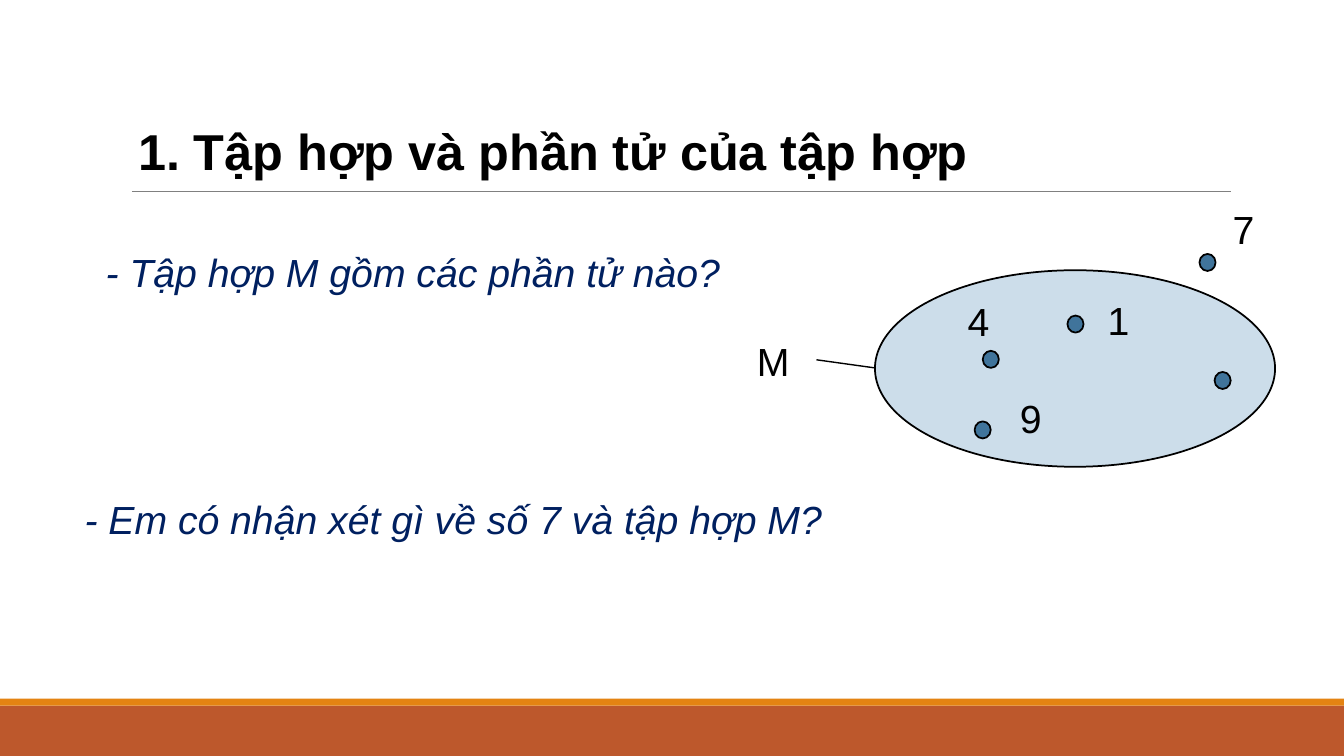
from pptx import Presentation
from pptx.dml.color import RGBColor
from pptx.enum.shapes import MSO_CONNECTOR, MSO_SHAPE
from pptx.enum.text import MSO_AUTO_SIZE, PP_ALIGN
from pptx.oxml.ns import qn
from pptx.util import Pt
from lxml import etree

RECT, OVAL = MSO_SHAPE.RECTANGLE, MSO_SHAPE.OVAL
STRAIGHT = MSO_CONNECTOR.STRAIGHT
LEFT, JUSTIFY = PP_ALIGN.LEFT, PP_ALIGN.JUSTIFY
FIT = MSO_AUTO_SIZE.SHAPE_TO_FIT_TEXT

WIDE, HIGH = 960, 540
FONT = "Arial"
COLORS = {"black": "000000", "navy": "002060", "rust": "BD582C",
          "orange": "E48312", "gray": "808080", "pale": "CCDDEA", "blue": "40749B"}

BANDS = [("rust", 504, 36), ("orange", 499, 5)]
TITLE = ("1. Tập hợp và phần tử của tập hợp", (91.5, 82.1, 670.3, 51.1))
ASK = ("- Tập hợp M gồm các phần tử nào?", (68.4, 174.2, 517.7, 74.9))
NOTE = ("- Em có nhận xét gì về số 7 và tập hợp M?", (53.3, 333.4, 547.9, 51.8))
SET = (625, 193, 285.8, 140.4)
DOTS = [(702, 250.6), (762.5, 225.4), (696.2, 301), (867.6, 265.7), (856.8, 181.4)]
DOT = (11.5, 12.2)
LABELS = [("M", 533.5, 237.6), ("9", 721.4, 277.9), ("1", 784.1, 208.1),
          ("4", 684, 208.8), ("7", 873.4, 143.3)]
LABEL = (46.8, 41)
RULES = [((94.3, 136.8, 879.1, 136.8), "gray", 0.5),
         ((583.2, 257, 625, 262.8), "black", 1)]


def shade(name):
    return RGBColor.from_string(COLORS[name])


def add_form(kind, box, fill, edge=None):
    form = slide.shapes.add_shape(kind, *map(Pt, box))
    form.shadow.inherit = False
    form.fill.solid()
    form.fill.fore_color.rgb = shade(fill)
    if edge:
        form.line.color.rgb = shade(edge)
        form.line.width = Pt(1.25)
    else:
        form.line.fill.background()


def add_rule(ends, color, width):
    rule = slide.shapes.add_connector(STRAIGHT, *map(Pt, ends))
    rule.line.color.rgb = shade(color)
    rule.line.width = Pt(width)
    etree.SubElement(rule.element.spPr, qn("a:effectLst"))


def add_text(text, box, size=28, color="black", bold=False, slant=False,
             align=LEFT, wrap=True):
    frame = slide.shapes.add_textbox(*map(Pt, box)).text_frame
    frame.word_wrap = wrap
    frame.auto_size = FIT
    frame.text = text
    para = frame.paragraphs[0]
    para.alignment = align
    font = para.runs[0].font
    font.name, font.size = FONT, Pt(size)
    font.bold, font.italic = bold, slant
    font.color.rgb = shade(color)
    return para


deck = Presentation()
deck.slide_width, deck.slide_height = Pt(WIDE), Pt(HIGH)
slide = deck.slides.add_slide(deck.slide_layouts[6])

for color, top, height in BANDS:
    add_form(RECT, (0, top, WIDE, height), color)
add_text(*TITLE, size=36, bold=True)

add_form(OVAL, SET, "pale", "black")
for spot in DOTS:
    add_form(OVAL, spot + DOT, "blue", "black")
for rule in RULES:
    add_rule(*rule)
for text, left, top in LABELS:
    add_text(text, (left, top) + LABEL)

add_text(*ASK, color="navy", slant=True, align=JUSTIFY)
note = add_text(*NOTE, color="navy", slant=True, align=JUSTIFY, wrap=False)
note.line_spacing = 1.5
note.space_before = note.space_after = Pt(6)

deck.save("out.pptx")
